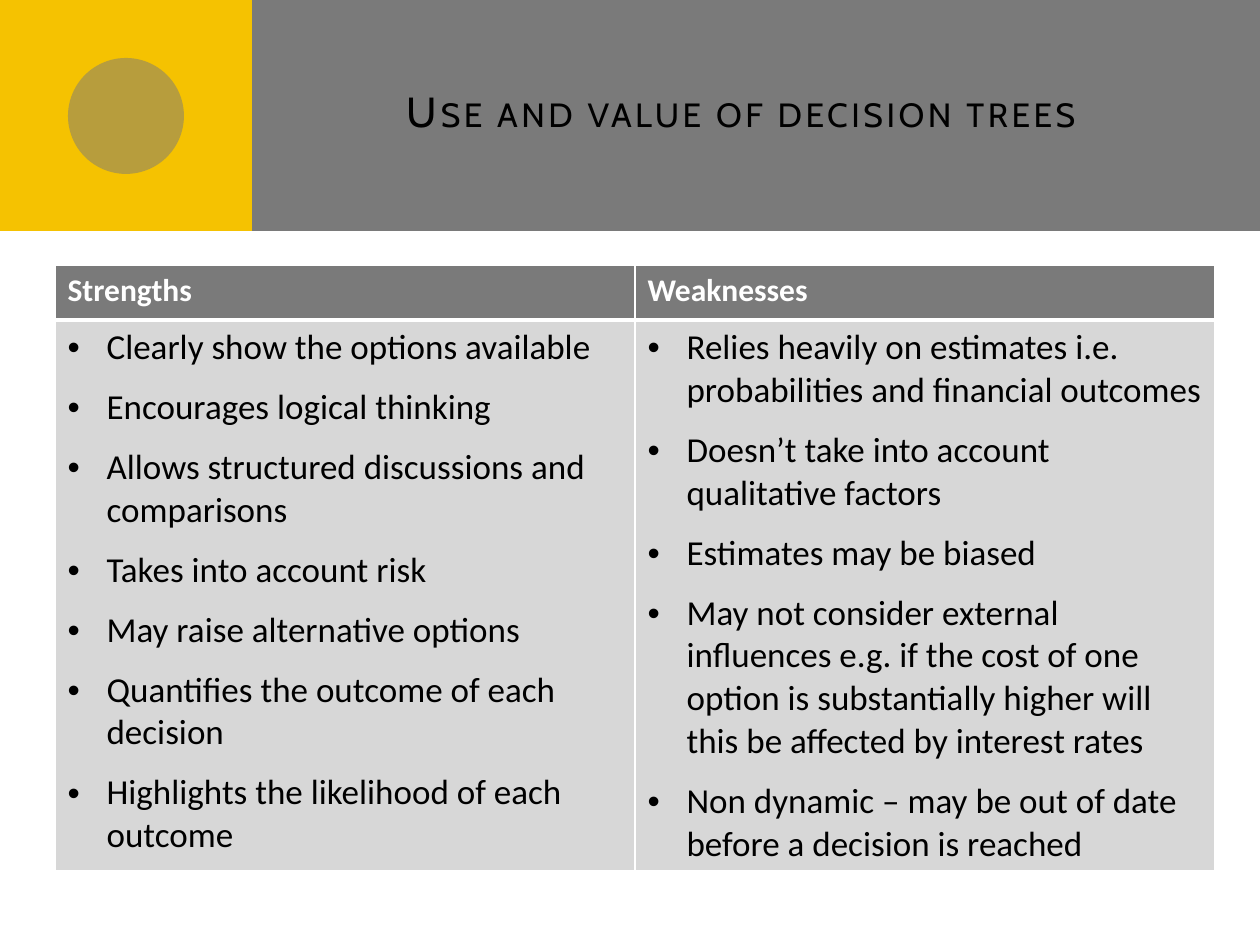
from dataclasses import dataclass

from lxml import etree
from pptx import Presentation
from pptx.dml.color import RGBColor
from pptx.enum.shapes import MSO_SHAPE
from pptx.enum.text import MSO_ANCHOR, PP_ALIGN
from pptx.oxml.ns import qn
from pptx.util import Emu, Pt

RECT, OVAL = MSO_SHAPE.RECTANGLE, MSO_SHAPE.OVAL
MIDDLE, RIGHT = MSO_ANCHOR.MIDDLE, PP_ALIGN.RIGHT
PX = 914400 / 126


@dataclass(frozen=True)
class Theme:
    gray: str = "7A7A7A"
    yellow: str = "F5C201"
    pale: str = "D7D7D7"
    black: str = "000000"
    white: str = "FFFFFF"
    title_font: str = "Cabin"
    body_font: str = "Calibri"
    title_pt: int = 24
    header_pt: int = 18
    body_pt: int = 20
    gap_pt: float = 9.75


@dataclass(frozen=True)
class Block:
    kind: int
    x: int
    y: int
    w: int
    h: int
    color: str
    opacity: int = 100


@dataclass(frozen=True)
class Column:
    heading: str
    points: tuple[str, ...]


T = Theme()
BLOCKS = (
    Block(RECT, 0, 0, 1260, 231, T.gray),
    Block(RECT, 0, 0, 252, 231, T.yellow),
    Block(OVAL, 68, 58, 116, 116, T.gray, 50),
)
COLUMNS = (
    Column("Strengths", (
        "Clearly show the options available",
        "Encourages logical thinking",
        "Allows structured discussions and comparisons",
        "Takes into account risk",
        "May raise alternative options",
        "Quantifies the outcome of each decision",
        "Highlights the likelihood of each outcome",
    )),
    Column("Weaknesses", (
        "Relies heavily on estimates i.e. probabilities and financial outcomes",
        "Doesn’t take into account qualitative factors",
        "Estimates may be biased",
        "May not consider external influences e.g. if the cost of one option "
        "is substantially higher will this be affected by interest rates",
        "Non dynamic – may be out of date before a decision is reached",
    )),
)


def px(n: int) -> Emu:
    """Turn pixels into EMU."""
    return Emu(round(n * PX))


def style(p, font: str, size: int, color: str, bold: bool = False) -> None:
    """Format every run of a paragraph."""
    for r in p.runs:
        r.font.name, r.font.size, r.font.bold = font, Pt(size), bold
        r.font.color.rgb = RGBColor.from_string(color)


def add_block(slide, b: Block) -> None:
    """Draw one flat block of the banner."""
    s = slide.shapes.add_shape(b.kind, px(b.x), px(b.y), px(b.w), px(b.h))
    s.shadow.inherit = False
    s.fill.solid()
    s.fill.fore_color.rgb = RGBColor.from_string(b.color)
    s.line.fill.background()
    if b.opacity < 100:
        clr = s.fill._xPr.find(".//" + qn("a:srgbClr"))
        etree.SubElement(clr, qn("a:alpha"), val=str(b.opacity * 1000))


def add_title(slide, text: str) -> None:
    """Write the spaced small-caps title."""
    tf = slide.shapes.add_textbox(px(336), px(32), px(861), px(158)).text_frame
    tf.word_wrap, tf.vertical_anchor = True, MIDDLE
    tf.text = text
    p = tf.paragraphs[0]
    p.alignment = RIGHT
    style(p, T.title_font, T.title_pt, T.black)
    rPr = p.runs[0].font._element
    rPr.set("cap", "small")
    rPr.set("spc", "200")


def paint_cell(cell, color: str, bottom: int) -> None:
    """Fill a cell and give it white borders."""
    cell.fill.solid()
    cell.fill.fore_color.rgb = RGBColor.from_string(color)
    tcPr = cell._tc.get_or_add_tcPr()
    for i, (side, width) in enumerate(zip("LRTB", (1, 1, 1, bottom))):
        ln = etree.Element(qn(f"a:ln{side}"), w=str(Pt(width)))
        fill = etree.SubElement(ln, qn("a:solidFill"))
        etree.SubElement(fill, qn("a:srgbClr"), val=T.white)
        tcPr.insert(i, ln)


def add_bullets(tf, points: tuple[str, ...]) -> None:
    """Write the points as an evenly spaced bullet list."""
    tf.text = "\n".join(points)
    for p in tf.paragraphs:
        style(p, T.body_font, T.body_pt, T.black)
        pPr = p._p.get_or_add_pPr()
        pPr.set("marL", str(px(39)))
        pPr.set("indent", str(px(-39)))
        etree.SubElement(pPr, qn("a:buFont"), typeface="Arial")
        etree.SubElement(pPr, qn("a:buChar"), char="•")
    for p in tf.paragraphs[:-1]:
        p.space_after = Pt(T.gap_pt)


def add_comparison(slide, columns: tuple[Column, ...]) -> None:
    """Draw the table with one heading and one list per column."""
    n = len(columns)
    table = slide.shapes.add_table(2, n, px(55), px(265), px(580 * n), px(606)).table
    table.horz_banding = False
    table.rows[0].height, table.rows[1].height = px(55), px(551)
    for i, col in enumerate(columns):
        table.columns[i].width = px(580)
        head, body = table.cell(0, i), table.cell(1, i)
        paint_cell(head, T.gray, 3)
        paint_cell(body, T.pale, 1)
        head.text_frame.text = col.heading
        style(head.text_frame.paragraphs[0], T.body_font, T.header_pt, T.white, True)
        add_bullets(body.text_frame, col.points)


def main() -> None:
    """Build and save the slide."""
    prs = Presentation()
    prs.slide_width, prs.slide_height = px(1260), px(945)
    slide = prs.slides.add_slide(prs.slide_layouts[6])
    for b in BLOCKS:
        add_block(slide, b)
    add_title(slide, "Use and value of decision trees")
    add_comparison(slide, COLUMNS)
    prs.save("out.pptx")


if __name__ == "__main__":
    main()
